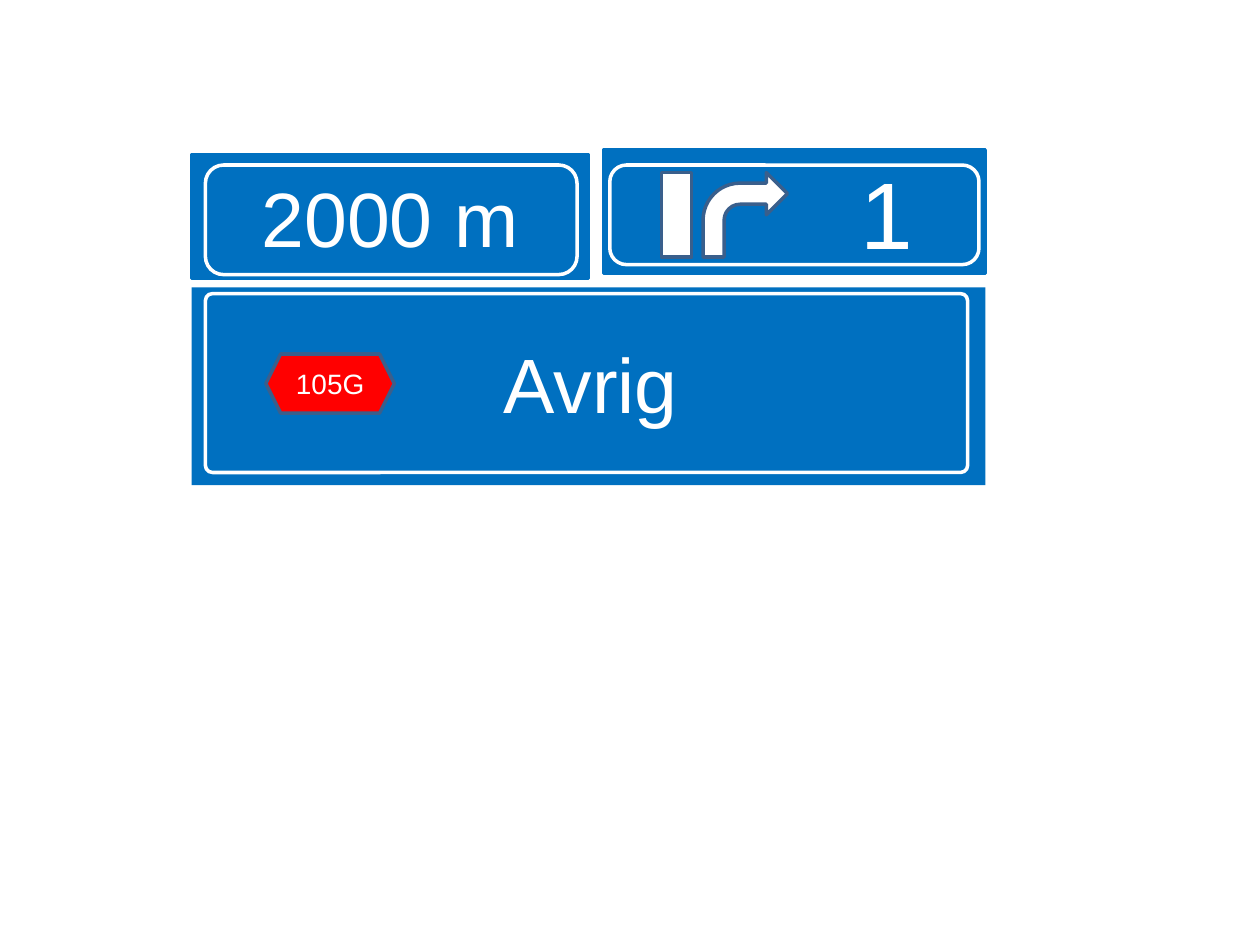
import pptx
import pptx.util
import pptx.dml.color
import pptx.enum.shapes
import pptx.enum.text

Inches = pptx.util.Inches
Pt = pptx.util.Pt
KIND = pptx.enum.shapes.MSO_SHAPE
ANCHOR = pptx.enum.text.MSO_ANCHOR

THEME = {
    "blue": "0070C0",
    "white": "FFFFFF",
    "red": "FF0000",
    "edge": "3A5F8C",
    "font": "Arial",
    "small": 16,
    "large": 44,
    "huge": 54,
}


def write(shape, text, size="large", anchor=ANCHOR.MIDDLE,
          inset=(0.1, 0.05, 0.1, 0.05), before=0):
    """Put one centred white line in a shape; inset is left, top, right, bottom."""
    frame = shape.text_frame
    frame.word_wrap = True
    frame.auto_size = pptx.enum.text.MSO_AUTO_SIZE.NONE
    frame.vertical_anchor = anchor
    frame.margin_left, frame.margin_top, frame.margin_right, frame.margin_bottom = map(Inches, inset)
    line = frame.paragraphs[0]
    line.alignment = pptx.enum.text.PP_ALIGN.CENTER
    line.space_before = Pt(before)
    run = line.add_run()
    run.text = text
    run.font.name = THEME["font"]
    run.font.size = Pt(THEME[size])
    run.font.color.rgb = pptx.dml.color.RGBColor.from_string(THEME["white"])


def draw(kind, box, fill=None, edge="white", adjust=()):
    shape = slide.shapes.add_shape(kind, *map(Inches, box))
    shape.shadow.inherit = False
    if fill:
        shape.fill.solid()
        shape.fill.fore_color.rgb = pptx.dml.color.RGBColor.from_string(THEME[fill])
    else:
        shape.fill.background()
    shape.line.color.rgb = pptx.dml.color.RGBColor.from_string(THEME[edge])
    shape.line.width = Pt(2)
    for place, value in enumerate(adjust):
        shape.adjustments[place] = value
    return shape


deck = pptx.Presentation()
deck.slide_width, deck.slide_height = Inches(10), Inches(7.5)
slide = deck.slides.add_slide(deck.slide_layouts[0])
title = slide.shapes.title
title.element.getparent().remove(title.element)

# Town panel
town = slide.placeholders[1]
town.left, town.top, town.width, town.height = map(Inches, (1.52, 2.28, 6.3, 1.57))
town.fill.solid()
town.fill.fore_color.rgb = pptx.dml.color.RGBColor.from_string(THEME["blue"])
write(town, " Avrig", anchor=ANCHOR.TOP, inset=(0, 0.39, 0.1, 0.24), before=9)
draw(KIND.ROUNDED_RECTANGLE, (1.63, 2.33, 6.05, 1.42), adjust=[0.04])

# Exit panel
leave = draw(KIND.ROUNDED_RECTANGLE, (4.79, 1.19, 3.03, 0.98), "blue", "blue", [0])
write(leave, "1", size="huge", inset=(1.57, 0.05, 0.1, 0.05))
draw(KIND.RECTANGLE, (5.25, 1.37, 0.24, 0.67), "white", "edge")
draw(KIND.BENT_ARROW, (5.58, 1.37, 0.67, 0.67), "white", "edge", [0.25, 0.25, 0.25, 0.44])
draw(KIND.ROUNDED_RECTANGLE, (4.84, 1.31, 2.93, 0.79))

# Distance panel
range_sign = draw(KIND.ROUNDED_RECTANGLE, (1.52, 1.23, 3.15, 0.98), "blue", "blue", [0])
write(range_sign, "2000 m")
draw(KIND.ROUNDED_RECTANGLE, (1.63, 1.31, 2.95, 0.87))

# Road number
road = draw(KIND.HEXAGON, (2.11, 2.81, 1.02, 0.47), "red", "edge")
write(road, "105G", size="small")

deck.save("out.pptx")
